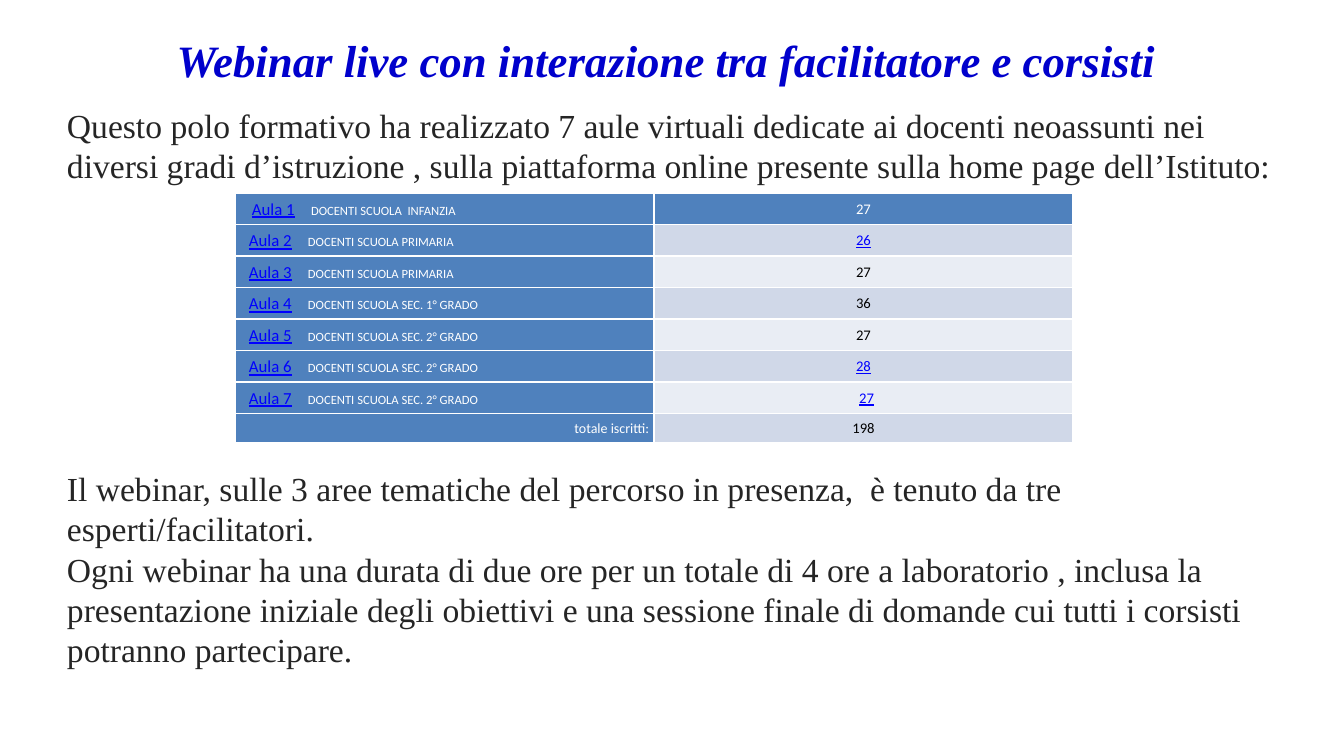
import pptx
import pptx.util
import pptx.dml.color
import pptx.enum.text
import pptx.oxml
import pptx.oxml.ns

SCALE = 914400 / 100.8  # EMU in one px
ALIGN = pptx.enum.text.PP_ALIGN
ANCHOR = pptx.enum.text.MSO_ANCHOR


class Theme:
    serif, sans = "Times New Roman", "Calibri"
    title, body, link, white, black = "0000CC", "252525", "0000FF", "FFFFFF", "000000"
    label_fill, band_dark, band_light = "4F81BD", "D0D8E8", "E9EDF4"
    title_size, body_size = 32, 24
    room_size, number_size, total_size, label_size = 12, 10.5, 10, 9


def px(length):
    return pptx.util.Emu(round(length * SCALE))


def write(para, text, size, color, font=Theme.sans, bold=False, italic=False, underline=False):
    span = para.add_run()
    span.text = text
    span.font.name = font
    span.font.size = pptx.util.Pt(size)
    span.font.color.rgb = pptx.dml.color.RGBColor.from_string(color)
    span.font.bold = bold
    span.font.italic = italic
    span.font.underline = underline


deck = pptx.Presentation()
deck.slide_width, deck.slide_height = px(1344), px(756)
page = deck.slides.add_slide(deck.slide_layouts[6])

# Title and body text
title_format = dict(size=Theme.title_size, color=Theme.title, font=Theme.serif, bold=True, italic=True)
body_format = dict(size=Theme.body_size, color=Theme.body, font=Theme.serif)
text_blocks = [
    (87, 33, 1159, 60, ALIGN.CENTER, title_format,
     ["Webinar live con interazione tra facilitatore e corsisti"]),
    (67, 105, 1218, 84, ALIGN.LEFT, body_format,
     ["Questo polo formativo ha realizzato 7 aule virtuali dedicate ai docenti neoassunti nei "
      "diversi gradi d’istruzione , sulla piattaforma online presente sulla home page dell’Istituto:"]),
    (67, 468, 1218, 238, ALIGN.LEFT, body_format,
     ["Il webinar, sulle 3 aree tematiche del percorso in presenza,  è tenuto da tre "
      "esperti/facilitatori.",
      "Ogni webinar ha una durata di due ore per un totale di 4 ore a laboratorio , inclusa la "
      "presentazione iniziale degli obiettivi e una sessione finale di domande cui tutti i corsisti "
      "potranno partecipare."]),
]
for left, top, width, height, alignment, text_format, paragraphs in text_blocks:
    box = page.shapes.add_textbox(px(left), px(top), px(width), px(height))
    frame = box.text_frame
    frame.word_wrap = True
    frame.margin_left = frame.margin_top = frame.margin_right = frame.margin_bottom = 0
    for index, text in enumerate(paragraphs):
        para = frame.paragraphs[0] if index == 0 else frame.add_paragraph()
        para.alignment = alignment
        write(para, text, **text_format)

# Classroom table: room, audience, enrolled, number shown as a link
classrooms = [
    ("Aula 1", "DOCENTI SCUOLA  INFANZIA", "27", False),
    ("Aula 2", "DOCENTI SCUOLA PRIMARIA", "26", True),
    ("Aula 3", "DOCENTI SCUOLA PRIMARIA", "27", False),
    ("Aula 4", "DOCENTI SCUOLA SEC. 1° GRADO", "36", False),
    ("Aula 5", "DOCENTI SCUOLA SEC. 2° GRADO", "27", False),
    ("Aula 6", "DOCENTI SCUOLA SEC. 2° GRADO", "28", True),
    ("Aula 7", "DOCENTI SCUOLA SEC. 2° GRADO", "27", True),
    (None, "totale iscritti:", "198", False),
]
table = page.shapes.add_table(len(classrooms), 2, px(235), px(193), px(838), px(237)).table
for column in table.columns:
    column.width = px(419)

for row, (room, audience, enrolled, linked) in enumerate(classrooms):
    table.rows[row].height = px(30 if room else 27)
    label, number = table.cell(row, 0), table.cell(row, 1)
    band = Theme.band_dark if row % 2 else Theme.band_light
    number_fill = band if row else Theme.label_fill

    # Borders, fill and margins
    for cell, fill in ((label, Theme.label_fill), (number, number_fill)):
        properties = cell._tc.get_or_add_tcPr()
        for side in "LRTB":
            properties.append(pptx.oxml.parse_xml(
                f'<a:ln{side} {pptx.oxml.ns.nsdecls("a")} w="12700"><a:solidFill>'
                f'<a:srgbClr val="{Theme.white}"/></a:solidFill></a:ln{side}>'))
        cell.fill.solid()
        cell.fill.fore_color.rgb = pptx.dml.color.RGBColor.from_string(fill)
        cell.margin_left = cell.margin_right = cell.margin_top = cell.margin_bottom = px(5)
        cell.vertical_anchor = ANCHOR.MIDDLE
        cell.text_frame.paragraphs[0].line_spacing = 1.07

    # Room and audience, set apart by a tab stop
    para = label.text_frame.paragraphs[0]
    if room:
        label.margin_left = px(14 if row else 17)
        para._p.get_or_add_pPr().append(pptx.oxml.parse_xml(
            f'<a:tabLst {pptx.oxml.ns.nsdecls("a")}><a:tab pos="{px(59)}" algn="l"/></a:tabLst>'))
        write(para, room, Theme.room_size, Theme.link, underline=True)
        write(para, "\t" + audience, Theme.label_size, Theme.white)
    else:
        para.alignment = ALIGN.RIGHT
        write(para, audience, Theme.total_size, Theme.white)

    # Enrolled teachers
    para = number.text_frame.paragraphs[0]
    para.alignment = ALIGN.CENTER
    plain = Theme.black if row else Theme.white
    write(para, enrolled, Theme.number_size, Theme.link if linked else plain, underline=linked)
    if room == "Aula 7":
        number.margin_left = px(11)

deck.save("out.pptx")
